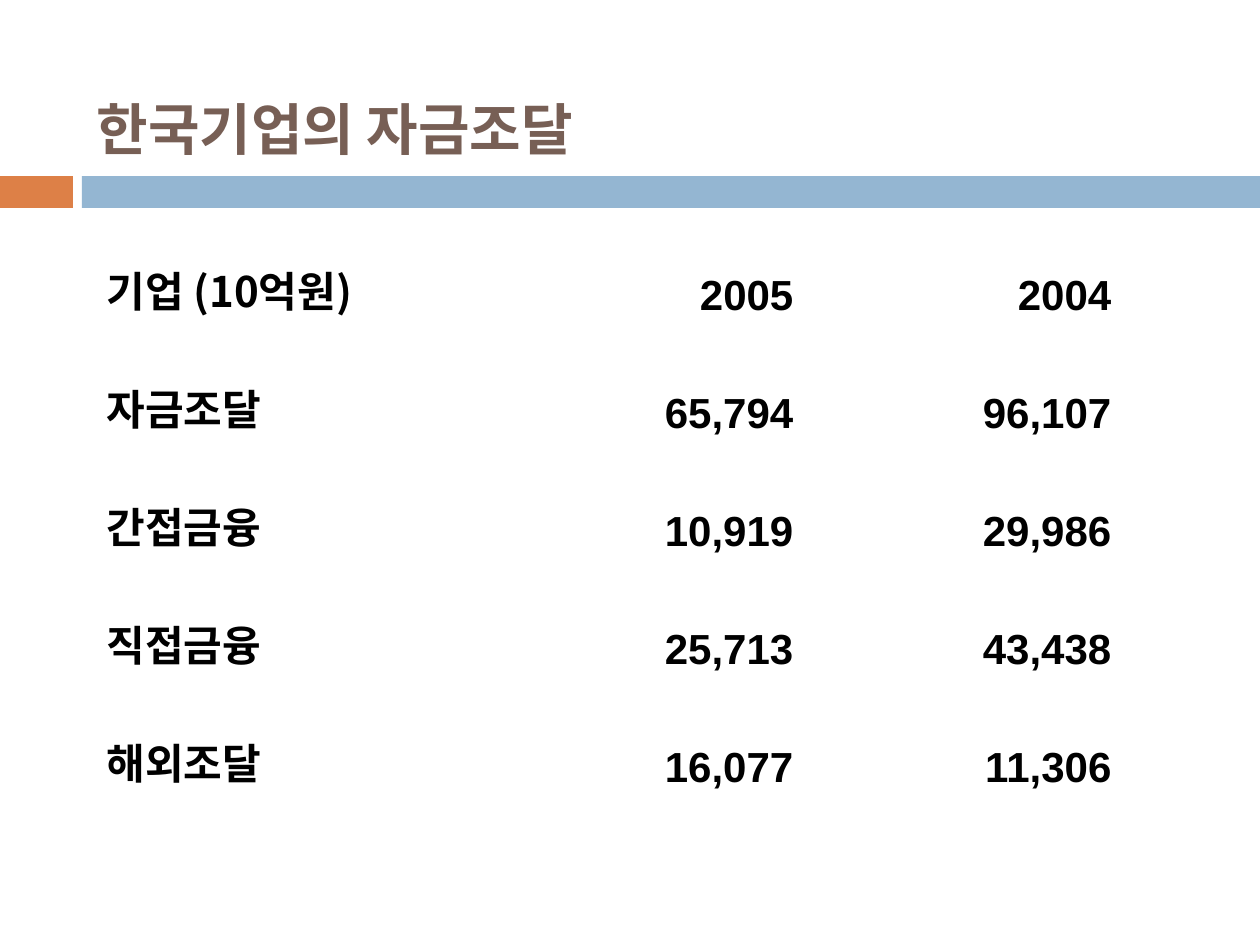
import pptx
import pptx.dml.color
import pptx.enum.shapes
import pptx.enum.text
import pptx.oxml.ns
import pptx.util
import lxml.etree

RGBColor = pptx.dml.color.RGBColor
PP_ALIGN = pptx.enum.text.PP_ALIGN
ANCHOR = pptx.enum.text.MSO_ANCHOR

ORANGE = RGBColor(0xDD, 0x80, 0x47)
BLUE = RGBColor(0x94, 0xB6, 0xD2)
BROWN = RGBColor(0x77, 0x5F, 0x55)
BLACK = RGBColor(0, 0, 0)
WHITE = RGBColor(0xFF, 0xFF, 0xFF)

KOREAN = "Noto Sans CJK KR"
PX_PER_INCH = 126
WIDTH, HEIGHT = 1260, 945

FUNDING = [
    ("기업 (10억원)", "2005", "2004"),
    ("자금조달", "65,794", "96,107"),
    ("간접금융", "10,919", "29,986"),
    ("직접금융", "25,713", "43,438"),
    ("해외조달", "16,077", "11,306"),
]


def px(n):
    return pptx.util.Emu(round(n * 914400 / PX_PER_INCH))


class Deck:
    def __init__(self):
        self.prs = pptx.Presentation()
        self.prs.slide_width, self.prs.slide_height = px(WIDTH), px(HEIGHT)
        self.s = self.prs.slides.add_slide(self.prs.slide_layouts[5])

    def style(self, p, font, size, color):
        for r in p.runs:
            r.font.name, r.font.size = font, pptx.util.Pt(size)
            r.font.bold = True
            r.font.color.rgb = color
            ea = lxml.etree.SubElement(r.font._element, pptx.oxml.ns.qn("a:ea"))
            ea.set("typeface", KOREAN)

    def title(self, text, x, y, w, h):
        sp = self.s.shapes.title
        sp.left, sp.top, sp.width, sp.height = px(x), px(y), px(w), px(h)
        tf = sp.text_frame
        tf.text = text
        tf.vertical_anchor = ANCHOR.BOTTOM
        p = tf.paragraphs[0]
        p.alignment = PP_ALIGN.LEFT
        self.style(p, "Calibri", 32, BROWN)

    def bar(self, x, y, w, h, color):
        sp = self.s.shapes.add_shape(
            pptx.enum.shapes.MSO_SHAPE.RECTANGLE, px(x), px(y), px(w), px(h))
        sp.shadow.inherit = False
        sp.fill.solid()
        sp.fill.fore_color.rgb = color
        sp.line.fill.background()

    def cell(self, cell, text, is_label):
        cell.vertical_anchor = ANCHOR.BOTTOM
        if is_label:
            cell.fill.solid()
            cell.fill.fore_color.rgb = WHITE
        else:
            cell.fill.background()
        cell.text_frame.text = text
        p = cell.text_frame.paragraphs[0]
        p.alignment = PP_ALIGN.LEFT if is_label else PP_ALIGN.RIGHT
        pPr = p._p.get_or_add_pPr()
        pPr.set("marL", str(px(48)))
        pPr.set("indent", str(px(-48)))
        self.style(p, KOREAN if is_label else "Arial", 24, BLACK)

    def table(self, rows, x, y, col_widths, row_heights):
        table = self.s.shapes.add_table(
            len(rows), len(col_widths), px(x), px(y),
            px(sum(col_widths)), px(sum(row_heights))).table
        table.first_row = table.horz_banding = False
        for column, w in zip(table.columns, col_widths):
            column.width = px(w)
        for i, (row, h) in enumerate(zip(rows, row_heights)):
            table.rows[i].height = px(h)
            for j, text in enumerate(row):
                self.cell(table.cell(i, j), text, j == 0)


def main():
    deck = Deck()
    deck.bar(0, 176, 73, 32, ORANGE)
    deck.bar(82, 176, WIDTH - 82, 32, BLUE)
    deck.title("한국기업의 자금조달", 84, 63, 1040, 105)
    deck.table(FUNDING, 94, 252, [445, 267, 318], [74] + [118] * 4)
    deck.prs.save("out.pptx")


if __name__ == "__main__":
    main()
